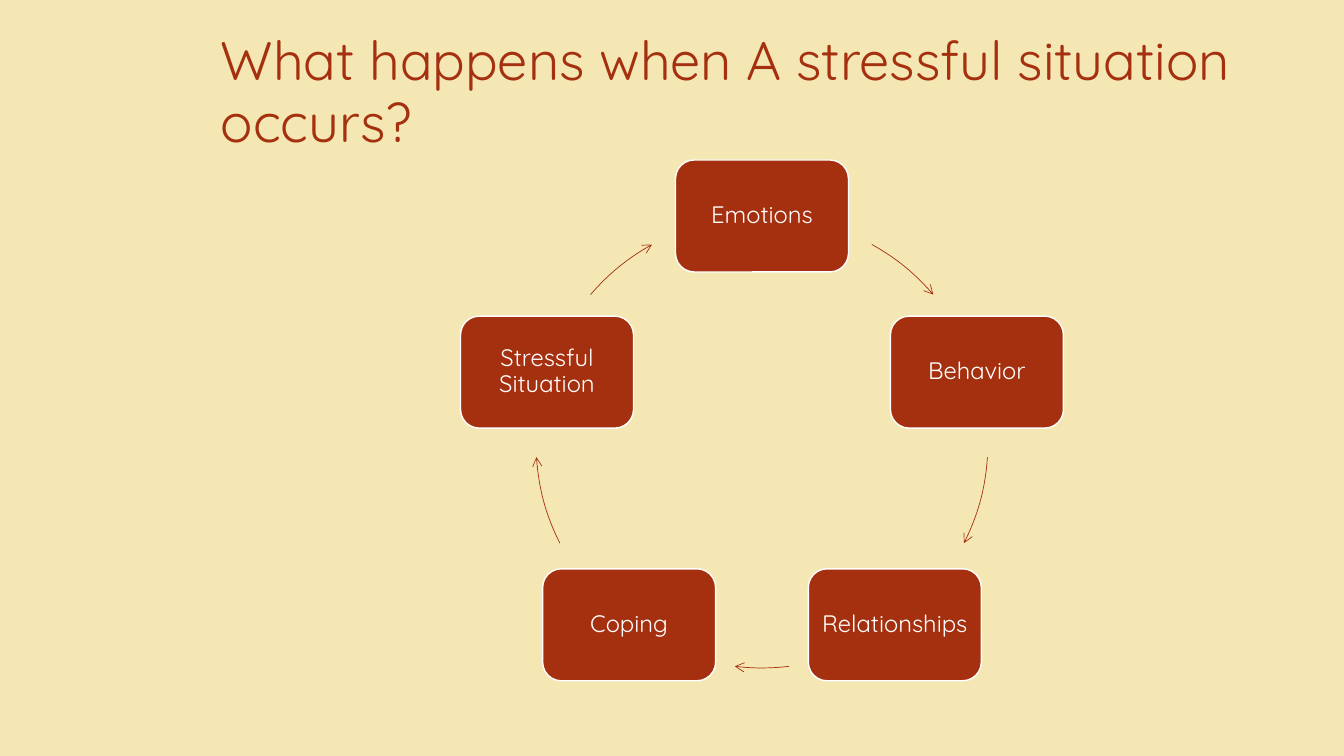
from math import cos, radians, sin

from lxml.etree import SubElement
from pptx import Presentation
from pptx.dml.color import RGBColor
from pptx.enum.shapes import MSO_SHAPE
from pptx.enum.text import MSO_ANCHOR, PP_ALIGN
from pptx.oxml.ns import qn
from pptx.util import Pt

EMU_PER_PX = 914400 / 100.8
RUST = "A5300F"
WHITE = "FFFFFF"
CREAM = "F5E7B4"
FONT = "Quicksand"

CENTER_X, CENTER_Y, RADIUS = 762, 442, 226
NODE_WIDTH, NODE_HEIGHT, NODE_INSET = 173, 112, 7
STAGES = ["Emotions", "Behavior", "Relationships", "Coping", "Stressful Situation"]
ARC_ANGLES = [(299.1, 319.3), (3.85, 26.6), (83.1, 96.9), (153.4, 176.15), (220.7, 240.9)]


def px(length):
    return round(length * EMU_PER_PX)


def color(hex_string):
    return RGBColor.from_string(hex_string)


def write(frame, text, size, hex_string, align, spacing):
    frame.word_wrap = True
    frame.vertical_anchor = MSO_ANCHOR.MIDDLE
    frame.text = text
    paragraph = frame.paragraphs[0]
    paragraph.alignment = align
    paragraph.line_spacing = spacing
    font = paragraph.runs[0].font
    font.name = FONT
    font.size = Pt(size)
    font.color.rgb = color(hex_string)


def add_title(slide, text):
    title = slide.shapes.add_textbox(px(211), px(30), px(1102), px(126))
    write(title.text_frame, text, 38.7, RUST, PP_ALIGN.LEFT, 0.96)


def add_stage(slide, text, angle):
    left = CENTER_X + RADIUS * cos(radians(angle)) - NODE_WIDTH / 2
    top = CENTER_Y + RADIUS * sin(radians(angle)) - NODE_HEIGHT / 2
    stage = slide.shapes.add_shape(
        MSO_SHAPE.ROUNDED_RECTANGLE, px(left), px(top), px(NODE_WIDTH), px(NODE_HEIGHT))
    stage.shadow.inherit = False
    stage.fill.solid()
    stage.fill.fore_color.rgb = color(RUST)
    stage.line.color.rgb = color(WHITE)
    stage.line.width = Pt(1)
    frame = stage.text_frame
    frame.margin_left = frame.margin_right = px(NODE_INSET)
    frame.margin_top = frame.margin_bottom = px(NODE_INSET)
    write(frame, text, 17, WHITE, PP_ALIGN.CENTER, 0.9)


def add_arc_arrow(slide, start, end):
    arc = slide.shapes.add_shape(
        MSO_SHAPE.ARC, px(CENTER_X - RADIUS), px(CENTER_Y - RADIUS),
        px(2 * RADIUS), px(2 * RADIUS))
    for index, angle in enumerate((start, end)):
        arc.adjustments[index] = angle * 60000 / 100000
    arc.shadow.inherit = False
    arc.fill.background()
    arc.line.color.rgb = color(RUST)
    arc.line.width = Pt(0.5)
    SubElement(arc.line._get_or_add_ln(), qn("a:tailEnd"), type="arrow")


def main():
    presentation = Presentation()
    presentation.slide_width = px(1344)
    presentation.slide_height = px(756)
    slide = presentation.slides.add_slide(presentation.slide_layouts[6])
    slide.background.fill.solid()
    slide.background.fill.fore_color.rgb = color(CREAM)

    add_title(slide, "What happens when A stressful situation occurs?")
    step = 360 / len(STAGES)
    for index, (stage, (start, end)) in enumerate(zip(STAGES, ARC_ANGLES)):
        add_stage(slide, stage, index * step - 90)
        add_arc_arrow(slide, start, end)

    presentation.save("out.pptx")


if __name__ == "__main__":
    main()
